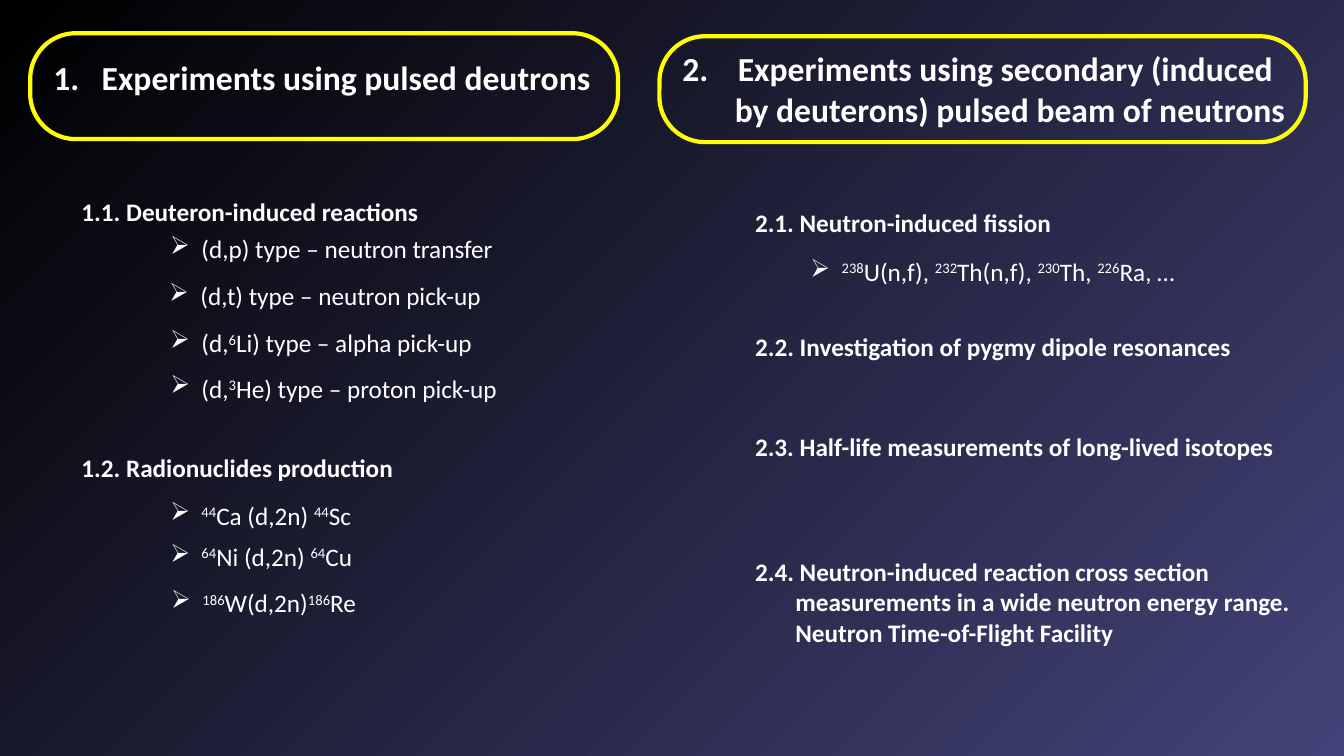
"""Build the slide listing deuteron and neutron experiments."""
from dataclasses import dataclass

import lxml.etree
import pptx
import pptx.dml.color
import pptx.enum.shapes
import pptx.enum.text
import pptx.oxml.ns
import pptx.slide
import pptx.text.text
import pptx.util

Inches = pptx.util.Inches
WHITE = pptx.dml.color.RGBColor(0xFF, 0xFF, 0xFF)
YELLOW = pptx.dml.color.RGBColor(0xFF, 0xFF, 0x00)
BLACK = pptx.dml.color.RGBColor(0x00, 0x00, 0x00)
INDIGO = pptx.dml.color.RGBColor(0x43, 0x43, 0x79)
FONT = "Calibri"
BULLET = "➢"
BULLET_INDENT = 0.31


@dataclass(frozen=True)
class Frame:
    left: float
    top: float
    width: float


@dataclass(frozen=True)
class Heading:
    left: float
    top: float
    width: float
    height: float
    lines: tuple[str, ...]
    number_indent: float
    frame: Frame


@dataclass(frozen=True)
class Topic:
    left: float
    top: float
    width: float
    lines: tuple[str, ...]
    height: float = 0.4
    justified: bool = False


@dataclass(frozen=True)
class Item:
    left: float
    top: float
    width: float
    text: str


FRAME_HEIGHT = 1.05
CONTINUATION_INDENT = 0.4
HEADING_CONTINUATION = 0.52

HEADINGS = (
    Heading(0.43, 0.52, 5.59, 0.5, ("1.\tExperiments using pulsed deutrons",),
            0.48, Frame(0.3, 0.33, 5.83)),
    Heading(6.67, 0.43, 6.24, 0.91,
            ("2.\tExperiments using secondary (induced",
             "by deuterons) pulsed beam of neutrons"),
            0.55, Frame(6.54, 0.36, 6.41)),
)
TOPICS = (
    Topic(0.71, 1.9, 3.69, ("1.1. Deuteron-induced reactions",)),
    Topic(0.71, 4.44, 3.31, ("1.2. Radionuclides production",)),
    Topic(7.39, 2.01, 3.16, ("2.1. Neutron-induced fission",)),
    Topic(7.39, 3.24, 4.98, ("2.2. Investigation of pygmy dipole resonances",),
          0.72, True),
    Topic(7.39, 4.23, 5.5, ("2.3. Half-life measurements of long-lived isotopes",)),
    Topic(7.39, 5.47, 5.55,
          ("2.4. Neutron-induced reaction cross section",
           "measurements in a wide neutron energy range.",
           "Neutron Time-of-Flight Facility"), 1.01),
)
ITEMS = (
    Item(1.59, 2.27, 3.44, "(d,p) type – neutron transfer"),
    Item(1.58, 2.73, 3.39, "(d,t) type – neutron pick-up"),
    Item(1.59, 3.2, 3.34, "(d,^6^Li) type – alpha pick-up"),
    Item(1.59, 3.65, 3.51, "(d,^3^He) type – proton pick-up"),
    Item(1.59, 4.91, 2.09, "^44^Ca (d,2n) ^44^Sc"),
    Item(1.59, 5.32, 2.09, "^64^Ni (d,2n) ^64^Cu"),
    Item(1.6, 5.78, 2.11, "^186^W(d,2n)^186^Re"),
    Item(7.94, 2.49, 4.13, "^238^U(n,f), ^232^Th(n,f), ^230^Th, ^226^Ra, …"),
)


def add_box(slide: pptx.slide.Slide, left: float, top: float, width: float,
            height: float, wrap: bool) -> pptx.text.text.TextFrame:
    """Add a text box and return its text frame."""
    box = slide.shapes.add_textbox(
        Inches(left), Inches(top), Inches(width), Inches(height))
    box.text_frame.word_wrap = wrap
    box.text_frame.auto_size = pptx.enum.text.MSO_AUTO_SIZE.SHAPE_TO_FIT_TEXT
    return box.text_frame


def indent(para: pptx.text.text._Paragraph, margin: float, first: float = 0) -> None:
    """Set the left margin and first-line indent of a paragraph."""
    properties = para._p.get_or_add_pPr()
    properties.set("marL", str(Inches(margin)))
    properties.set("indent", str(Inches(first)))


def add_spans(para: pptx.text.text._Paragraph, text: str, size: int, bold: bool) -> None:
    """Add runs to a paragraph, raising the parts between carets."""
    for position, part in enumerate(text.split("^")):
        if not part:
            continue
        span = para.add_run()
        span.text = part
        span.font.name = FONT
        span.font.size = pptx.util.Pt(size)
        span.font.bold = bold
        span.font.color.rgb = WHITE
        if position % 2:
            span._r.get_or_add_rPr().set("baseline", "30000")


def add_lines(frame: pptx.text.text.TextFrame, lines: tuple[str, ...], size: int,
              continuation: float) -> None:
    """Write bold lines, indenting every line after the first."""
    for number, line in enumerate(lines):
        para = frame.add_paragraph() if number else frame.paragraphs[0]
        if number:
            indent(para, continuation)
        add_spans(para, line, size, True)


def add_heading(slide: pptx.slide.Slide, heading: Heading) -> None:
    """Draw a numbered heading inside its rounded outline."""
    outline = slide.shapes.add_shape(
        pptx.enum.shapes.MSO_SHAPE.ROUNDED_RECTANGLE,
        Inches(heading.frame.left), Inches(heading.frame.top),
        Inches(heading.frame.width), Inches(FRAME_HEIGHT))
    outline.adjustments[0] = 0.43
    outline.shadow.inherit = False
    outline.fill.background()
    outline.line.color.rgb = YELLOW
    outline.line.width = pptx.util.Pt(3)
    frame = add_box(slide, heading.left, heading.top, heading.width,
                    heading.height, True)
    indent(frame.paragraphs[0], heading.number_indent, -heading.number_indent)
    add_lines(frame, heading.lines, 24, HEADING_CONTINUATION)


def add_topic(slide: pptx.slide.Slide, topic: Topic) -> None:
    """Draw a bold numbered topic."""
    frame = add_box(slide, topic.left, topic.top, topic.width, topic.height, False)
    if topic.justified:
        frame.paragraphs[0].alignment = pptx.enum.text.PP_ALIGN.JUSTIFY
    add_lines(frame, topic.lines, 18, CONTINUATION_INDENT)


def add_item(slide: pptx.slide.Slide, item: Item) -> None:
    """Draw one bulleted reaction."""
    para = add_box(slide, item.left, item.top, item.width, 0.4, False).paragraphs[0]
    indent(para, BULLET_INDENT, -BULLET_INDENT)
    bullet = lxml.etree.SubElement(
        para._p.get_or_add_pPr(), pptx.oxml.ns.qn("a:buChar"))
    bullet.set("char", BULLET)
    add_spans(para, item.text, 18, False)


def main() -> None:
    """Build and save the deck."""
    deck = pptx.Presentation()
    deck.slide_width, deck.slide_height = Inches(13.33), Inches(7.5)
    slide = deck.slides.add_slide(deck.slide_layouts[6])
    fill = slide.background.fill
    fill.gradient()
    fill.gradient_angle = 315
    for stop, color in zip(fill.gradient_stops, (BLACK, INDIGO)):
        stop.color.rgb = color
    for heading in HEADINGS:
        add_heading(slide, heading)
    for topic in TOPICS:
        add_topic(slide, topic)
    for item in ITEMS:
        add_item(slide, item)
    deck.save("out.pptx")


if __name__ == "__main__":
    main()
